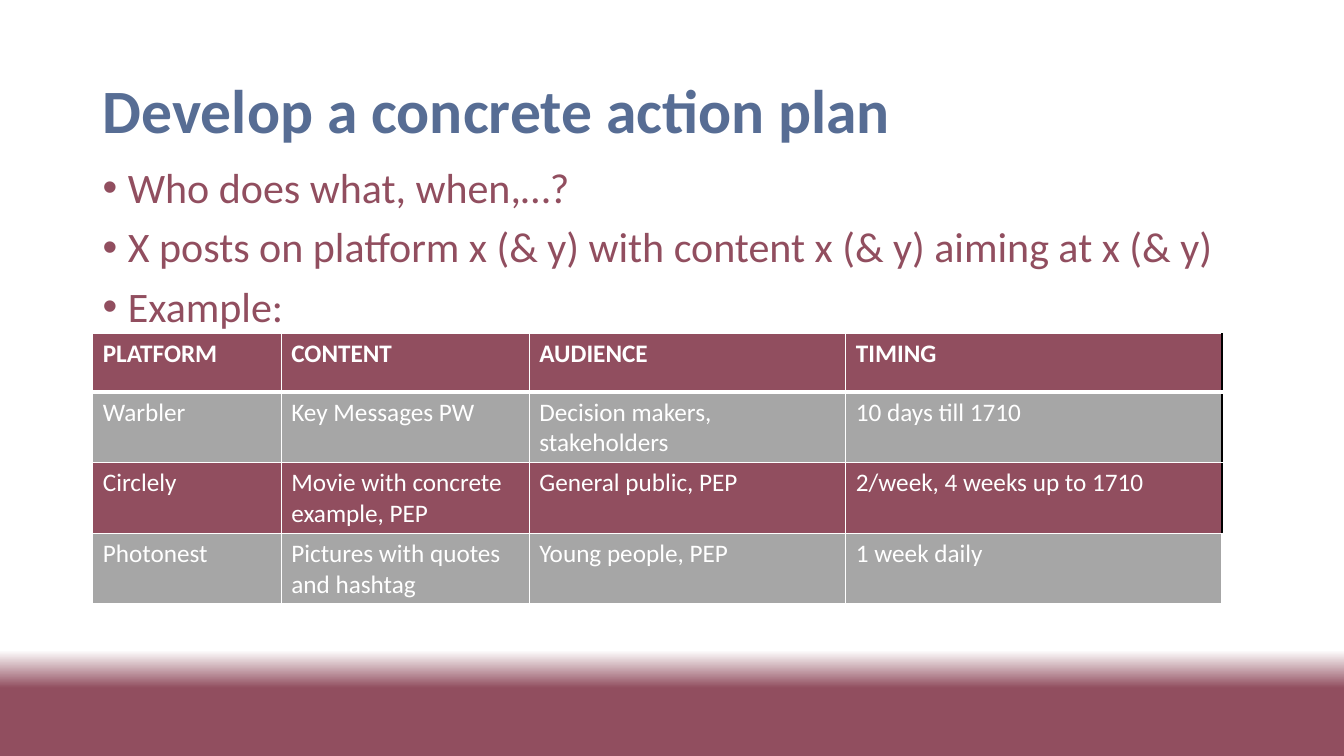
from lxml.etree import SubElement
from pptx import Presentation
from pptx.dml.color import RGBColor
from pptx.enum.text import MSO_ANCHOR, MSO_AUTO_SIZE, PP_ALIGN
from pptx.oxml.ns import qn
from pptx.util import Inches, Pt

BLUE, WINE, GREY, WHITE, BLACK = "576D94", "914E5F", "A6A6A6", "FFFFFF", "000000"
TITLE_FONT = {"name": "Calibri", "size": Pt(44), "bold": True}
BODY_FONT = {"name": "Calibri", "size": Pt(30), "bold": False}
HEADER_FONT = {"name": "Calibri", "size": Pt(18), "bold": True}
CELL_FONT = HEADER_FONT | {"bold": False}

BULLETS = [
    "Who does what, when,…?",
    "X posts on platform x (& y) with content x (& y) aiming at x (& y)",
    "Example:",
]
PLAN = [
    ["PLATFORM", "CONTENT", "AUDIENCE", "TIMING"],
    ["Warbler", "Key Messages PW", "Decision makers, stakeholders", "10 days till 1710"],
    ["Circlely", "Movie with concrete example, PEP", "General public, PEP",
     "2/week, 4 weeks up to 1710"],
    ["Photonest", "Pictures with quotes and hashtag", "Young people, PEP", "1 week daily"],
]
COLUMN_WIDTHS = [1.87, 2.46, 3.14, 3.73]
ROW_HEIGHT = 0.58


def rgb(color):
    return RGBColor.from_string(color)


def format_font(paragraph, values, color):
    for name, value in values.items():
        setattr(paragraph.font, name, value)
    paragraph.font.color.rgb = rgb(color)


def paint_background(slide):
    """Fade from white to a wine-coloured band along the bottom."""
    fill = slide.background.fill
    fill.gradient()
    fill.gradient_angle = 270
    stops = slide.element.find(".//" + qn("a:gsLst"))
    for stop in list(stops):
        stops.remove(stop)
    for percent, color in [(0, WHITE), (86, WHITE), (91, WINE), (100, WINE)]:
        stop = SubElement(stops, qn("a:gs"), pos=str(percent * 1000))
        SubElement(stop, qn("a:srgbClr"), val=color)


def place_title(slide, text, left, top, width, height):
    title = slide.shapes.title
    title.left, title.top = Inches(left), Inches(top)
    title.width, title.height = Inches(width), Inches(height)
    frame = title.text_frame
    frame.text = text
    frame.auto_size = MSO_AUTO_SIZE.NONE
    frame.vertical_anchor = MSO_ANCHOR.MIDDLE
    paragraph = frame.paragraphs[0]
    paragraph.alignment = PP_ALIGN.LEFT
    paragraph.line_spacing = 0.9
    format_font(paragraph, TITLE_FONT, BLUE)


def add_bullets(slide, lines, left, top, width, height):
    box = slide.shapes.add_textbox(Inches(left), Inches(top), Inches(width), Inches(height))
    frame = box.text_frame
    frame.word_wrap = True
    for index, line in enumerate(lines):
        paragraph = frame.add_paragraph() if index else frame.paragraphs[0]
        paragraph.text = line
        paragraph.line_spacing = 0.9
        paragraph.space_before = Pt(10 if index else 0)
        properties = paragraph._p.get_or_add_pPr()
        properties.set("marL", str(Inches(0.25)))
        properties.set("indent", str(Inches(-0.25)))
        SubElement(properties, qn("a:buFont"), typeface="Arial")
        SubElement(properties, qn("a:buChar"), char="•")
        format_font(paragraph, BODY_FONT, WINE)


def set_border(cell, side, color, points):
    properties = cell._tc.get_or_add_tcPr()
    line = SubElement(properties, qn(f"a:ln{side}"), w=str(Pt(points)))
    fill = SubElement(line, qn("a:solidFill"))
    SubElement(fill, qn("a:srgbClr"), val=color)


def add_plan_table(slide, rows, left, top):
    table = slide.shapes.add_table(
        len(rows), len(COLUMN_WIDTHS), Inches(left), Inches(top),
        Inches(sum(COLUMN_WIDTHS)), Inches(ROW_HEIGHT * len(rows))).table
    for column, width in zip(table.columns, COLUMN_WIDTHS):
        column.width = Inches(width)
    last_row, last_column = len(rows) - 1, len(COLUMN_WIDTHS) - 1
    for row, texts in enumerate(rows):
        for column, text in enumerate(texts):
            cell = table.cell(row, column)
            cell.text = text
            format_font(cell.text_frame.paragraphs[0], CELL_FONT if row else HEADER_FONT, WHITE)
            black_edge = column == last_column and row < last_row
            set_border(cell, "L", WHITE, 1)
            set_border(cell, "R", BLACK if black_edge else WHITE, 1)
            set_border(cell, "T", WHITE, 3 if row == 1 else 1)
            set_border(cell, "B", WHITE, 1 if row else 3)
            cell.fill.solid()
            cell.fill.fore_color.rgb = rgb(GREY if row % 2 else WINE)


def main():
    presentation = Presentation()
    presentation.slide_width, presentation.slide_height = Inches(13.33), Inches(7.5)
    slide = presentation.slides.add_slide(presentation.slide_layouts[5])
    paint_background(slide)
    place_title(slide, "Develop a concrete action plan", 0.92, 0.4, 10.23, 1.45)
    add_bullets(slide, BULLETS, 0.92, 1.61, 11.5, 5.03)
    add_plan_table(slide, PLAN, 0.92, 3.31)
    presentation.save("out.pptx")


if __name__ == "__main__":
    main()
